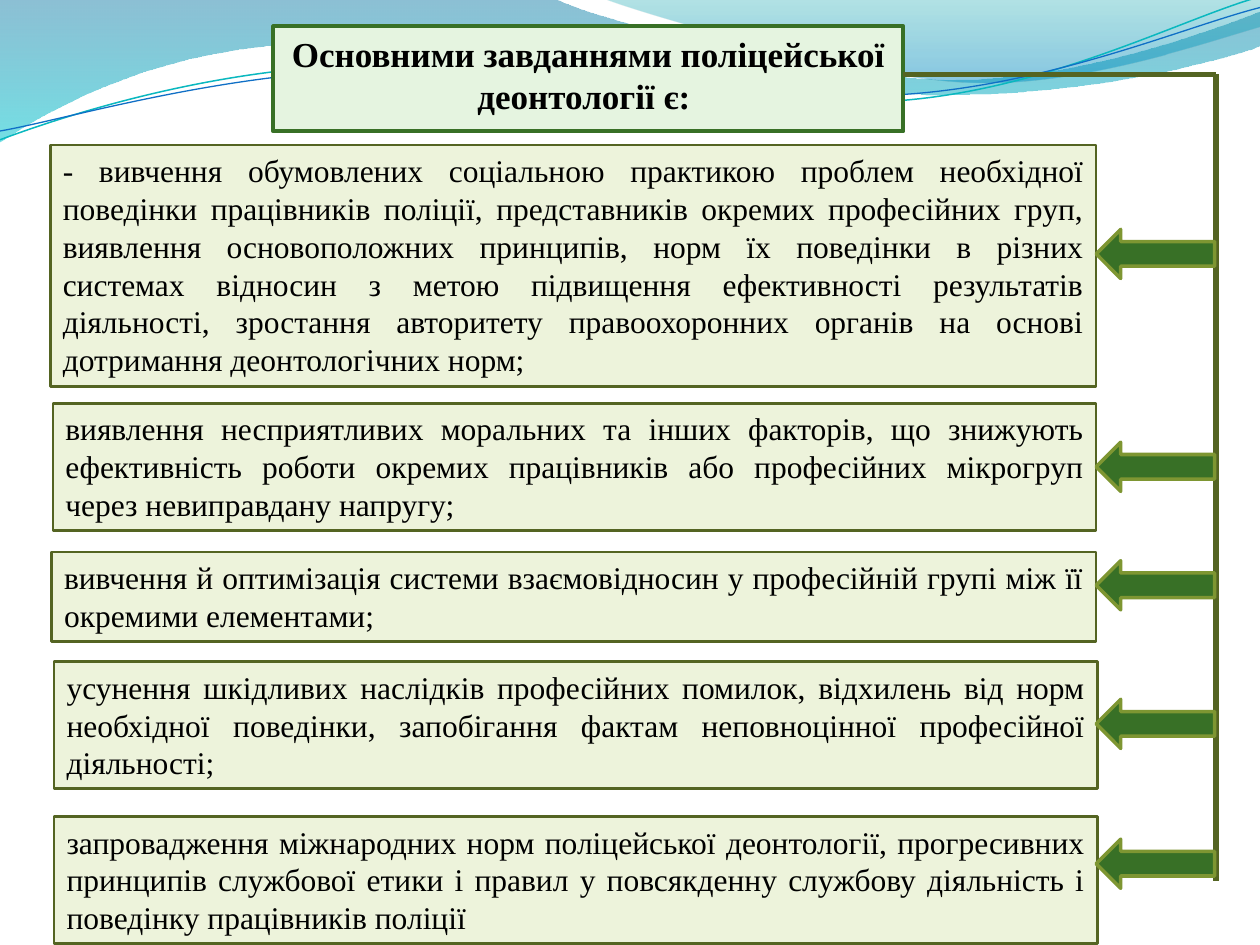
from dataclasses import dataclass

import pptx
import pptx.dml.color
import pptx.enum.shapes
import pptx.enum.text
import pptx.oxml.ns
import pptx.util
from lxml import etree
from pptx.util import Inches

COLORS = {
    "title_fill": "E5F4E0",
    "green": "387026",
    "task_fill": "EDF3DB",
    "olive": "546422",
    "arrow_line": "7E9632",
    "text": "000000",
    "deep_blue": "0074A1",
    "cyan": "00C6CF",
    "teal": "00A1A9",
    "sky": "008BBF",
    "thin_teal": "0AB8BF",
    "thin_blue": "0F6FC6",
}
FONT = "Times New Roman"
ARROW_LEFT, ARROW_W, ARROW_H = 8.7, 0.94, 0.39
RAIL_X, RAIL_TOP, RAIL_BOTTOM = 9.65, 0.59, 6.99
FIRST_WAVE_ID = 101


@dataclass(frozen=True)
class Task:
    left: float
    top: float
    width: float
    height: float
    arrow_top: float
    text: str


@dataclass(frozen=True)
class Stop:
    position: float
    color: str
    opacity: int


@dataclass(frozen=True)
class Wave:
    """A chain of points (x, y) and cubic curves (x1, y1, x2, y2, x, y)."""
    steps: tuple
    stops: tuple = ()
    line: str = ""
    width: float = 0


WAVES = (
    Wave(((0, 0), (4.4, -0.01), (4.76, 0.17, 6.64, 0.63, 7.58, 0.63),
          (8.53, 0.63, 9.58, 0.26, 10, 0.09), (10.01, 0.36),
          (9.83, 0.44, 8.7, 0.76, 7.46, 0.75), (6.22, 0.75, 3.82, 0.28, 2.57, 0.34),
          (1.29, 0.36, 0.46, 0.83, -0.01, 1.13), (0, 0)),
         stops=(Stop(0, "deep_blue", 45), Stop(1, "cyan", 55))),
    Wave(((4.79, -0.01), (5.09, 0.11, 6.82, 0.62, 7.69, 0.65),
          (8.56, 0.69, 9.61, 0.32, 10, 0.21), (10, 0), (4.79, -0.01)),
         stops=(Stop(0, "teal", 30), Stop(0.8, "sky", 45))),
    Wave(((0, 1.11), (0.48, 0.93, 1.58, 0.57, 2.77, 0.52),
          (3.95, 0.47, 5.93, 0.89, 7.13, 0.8), (8.33, 0.71, 9.38, 0.15, 9.98, -0.02)),
         line="thin_teal", width=0.85),
    Wave(((0, 1.04), (0.47, 0.96, 1.64, 0.61, 2.83, 0.56),
          (4.03, 0.51, 5.97, 0.84, 7.17, 0.75), (8.36, 0.67, 9.41, 0.21, 10, 0.06)),
         line="thin_blue", width=0.75),
)

TASKS = (
    Task(0.4, 1.15, 8.3, 1.92, 1.82,
         "- вивчення обумовлених соціальною практикою проблем необхідної поведінки "
         "працівників поліції, представників окремих професійних груп, виявлення "
         "основоположних принципів, норм їх поведінки в різних системах відносин з метою "
         "підвищення ефективності результатів діяльності, зростання авторитету "
         "правоохоронних органів на основі дотримання деонтологічних норм;"),
    Task(0.42, 3.2, 8.28, 1.01, 3.51,
         "виявлення несприятливих моральних та інших факторів, що знижують ефективність "
         "роботи окремих працівників або професійних мікрогруп через невиправдану напругу;"),
    Task(0.41, 4.38, 8.29, 0.71, 4.45,
         "вивчення й оптимізація системи взаємовідносин у професійній групі між її "
         "окремими елементами;"),
    Task(0.43, 5.25, 8.28, 1.01, 5.55,
         "усунення шкідливих наслідків професійних помилок, відхилень від норм необхідної "
         "поведінки, запобігання фактам неповноцінної професійної діяльності;"),
    Task(0.43, 6.48, 8.28, 1.01, 6.66,
         "запровадження міжнародних норм поліцейської деонтології, прогресивних принципів "
         "службової етики і правил у повсякденну службову діяльність і поведінку "
         "працівників поліції "),
)


def rgb(name: str) -> pptx.dml.color.RGBColor:
    return pptx.dml.color.RGBColor.from_string(COLORS[name])


def set_line(s, color: str, width: float) -> None:
    s.line.color.rgb = rgb(color)
    s.line.width = pptx.util.Pt(width)


def paint(s, fill: str, line: str, width: float) -> None:
    s.fill.solid()
    s.fill.fore_color.rgb = rgb(fill)
    set_line(s, line, width)


def write(s, text: str, size: int, align, bold: bool = False) -> None:
    tf = s.text_frame
    tf.text = text
    tf.word_wrap = True
    tf.auto_size = pptx.enum.text.MSO_AUTO_SIZE.SHAPE_TO_FIT_TEXT
    tf.vertical_anchor = pptx.enum.text.MSO_ANCHOR.TOP
    p = tf.paragraphs[0]
    p.alignment = align
    font = p.runs[0].font
    font.name, font.size, font.bold = FONT, pptx.util.Pt(size), bold
    font.color.rgb = rgb("text")


def bend(s, steps: tuple) -> None:
    """Join the three straight segments of each curve step into one cubic curve."""
    segments = iter(s._element.xpath(".//a:path/a:lnTo"))
    for step in steps[1:]:
        first = next(segments)
        if len(step) == 2:
            continue
        curve = etree.Element(pptx.oxml.ns.qn("a:cubicBezTo"))
        first.addprevious(curve)
        for segment in (first, next(segments), next(segments)):
            curve.append(segment[0])
            segment.getparent().remove(segment)


def add_wave(slide, wave: Wave):
    points = [(Inches(step[i]), Inches(step[i + 1]))
              for step in wave.steps for i in range(0, len(step), 2)]
    builder = slide.shapes.build_freeform(*points[0])
    builder.add_line_segments(points[1:], close=bool(wave.stops))
    s = builder.convert_to_shape()
    bend(s, wave.steps)
    s.shadow.inherit = False
    if not wave.stops:
        s.fill.background()
        set_line(s, wave.line, wave.width)
        return s
    s.line.fill.background()
    s.fill.gradient()
    s.fill.gradient_angle = 270
    for stop, target in zip(wave.stops, s.fill.gradient_stops):
        target.position = stop.position
        target.color.rgb = rgb(stop.color)
    for stop, clr in zip(wave.stops, s._element.xpath(".//a:gs/a:srgbClr")):
        alpha = etree.SubElement(clr, pptx.oxml.ns.qn("a:alpha"))
        alpha.set("val", str(stop.opacity * 1000))
    return s


def decorate_master(prs, slide) -> None:
    """Draw the waves and hand them over to the slide master."""
    for number, wave in enumerate(WAVES, FIRST_WAVE_ID):
        s = add_wave(slide, wave)
        s._element.nvSpPr.cNvPr.set("id", str(number))
        prs.slide_master.shapes._spTree.append(s._element)


def add_box(slide, kind, left: float, top: float, width: float, height: float):
    s = slide.shapes.add_shape(kind, Inches(left), Inches(top), Inches(width), Inches(height))
    s.shadow.inherit = False
    return s


def add_rail(slide, x1: float, y1: float, x2: float, y2: float) -> None:
    s = slide.shapes.add_connector(pptx.enum.shapes.MSO_CONNECTOR.STRAIGHT,
                                   Inches(x1), Inches(y1), Inches(x2), Inches(y2))
    set_line(s, "olive", 3)
    etree.SubElement(s._element.spPr, pptx.oxml.ns.qn("a:effectLst"))


def place_title(slide) -> None:
    s = slide.shapes.title
    s.left, s.top, s.width, s.height = Inches(2.17), Inches(0.21), Inches(5), Inches(0.77)
    paint(s, "title_fill", "green", 2.25)
    write(s, "Основними завданнями поліцейської деонтології є: ", 20,
          pptx.enum.text.PP_ALIGN.CENTER, bold=True)


def main() -> None:
    shape_types = pptx.enum.shapes.MSO_SHAPE
    prs = pptx.Presentation()
    prs.slide_width, prs.slide_height = Inches(10), Inches(7.5)
    slide = prs.slides.add_slide(prs.slide_layouts[5])
    decorate_master(prs, slide)
    place_title(slide)
    for task in TASKS:
        s = add_box(slide, shape_types.RECTANGLE, task.left, task.top, task.width, task.height)
        paint(s, "task_fill", "olive", 1.5)
        write(s, task.text, 18, pptx.enum.text.PP_ALIGN.JUSTIFY)
    add_rail(slide, 7.17, RAIL_TOP, RAIL_X, RAIL_TOP)
    add_rail(slide, RAIL_X, RAIL_TOP, RAIL_X, RAIL_BOTTOM)
    for task in TASKS:
        s = add_box(slide, shape_types.LEFT_ARROW, ARROW_LEFT, task.arrow_top, ARROW_W, ARROW_H)
        paint(s, "green", "arrow_line", 2)
    prs.save("out.pptx")


if __name__ == "__main__":
    main()
